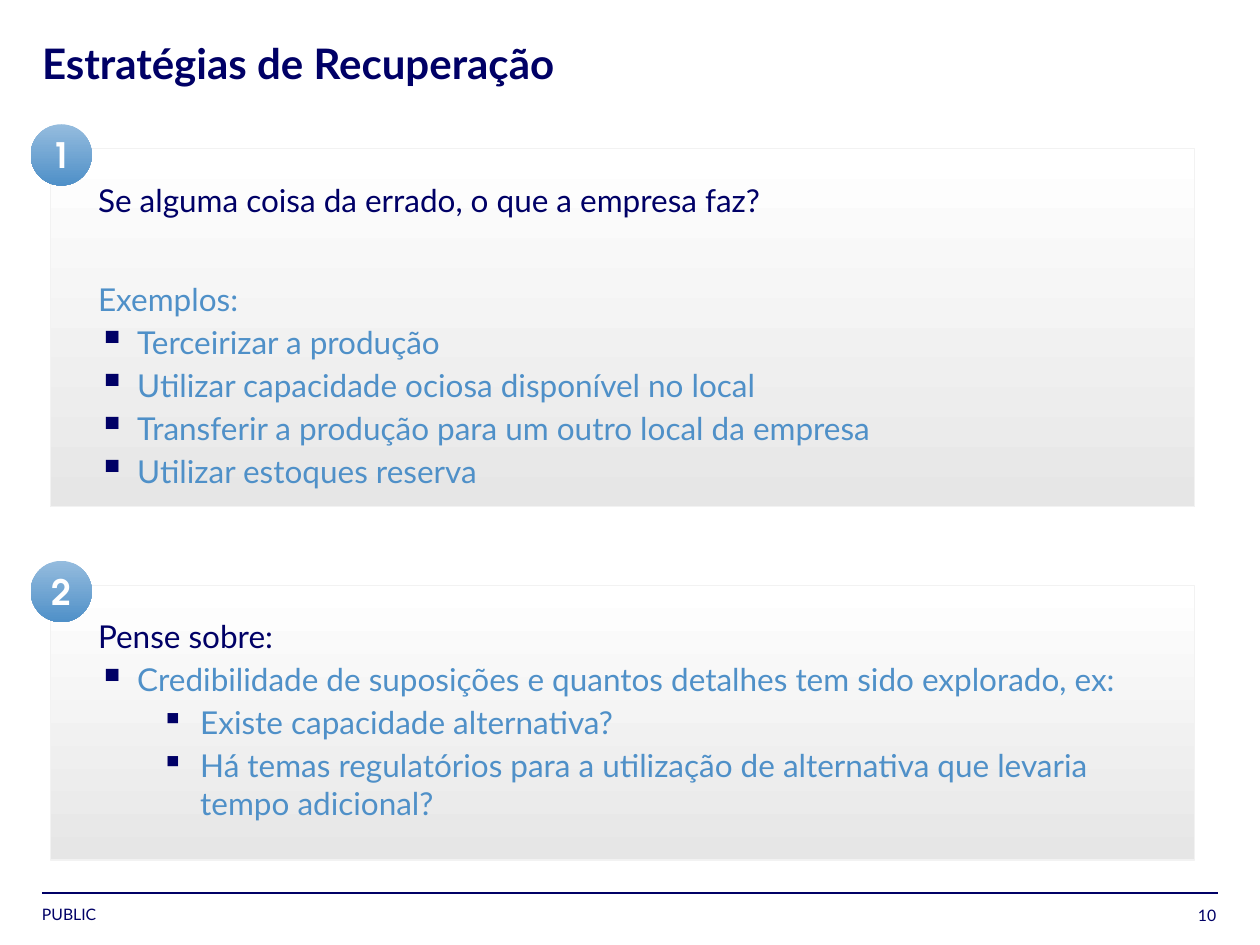
from lxml import etree
from pptx import Presentation
from pptx.dml.color import RGBColor
from pptx.enum import shapes, text
from pptx.oxml import ns
from pptx.util import Pt

NAVY, BLUE, WHITE = "000066", "4F90C8", "FFFFFF"
LEFT, TEXT_LEFT, TEXT_WIDTH = 24, 56, 599


def color(value):
    return RGBColor.from_string(value)


class SlideWriter:
    font = "Lato"
    badge_font = "TeX Gyre Adventor"
    indent = 22.4

    def __init__(self, page):
        self.page = page

    def style(self, para, size, hue, bold=False, name=None):
        para.font.name = name or self.font
        para.font.size = Pt(size)
        para.font.bold = bold
        para.font.color.rgb = color(hue)

    def frame(self, shape, wrap=True, anchor=text.MSO_ANCHOR.TOP):
        frame = shape.text_frame
        frame.margin_left = frame.margin_right = 0
        frame.margin_top = frame.margin_bottom = 0
        frame.auto_size = text.MSO_AUTO_SIZE.NONE
        frame.word_wrap = wrap
        frame.vertical_anchor = anchor
        return frame

    def title(self, words, left, top, width, height):
        shape = self.page.shapes.title
        shape.left, shape.top = Pt(left), Pt(top)
        shape.width, shape.height = Pt(width), Pt(height)
        para = self.frame(shape).paragraphs[0]
        para.text = words
        para.alignment = text.PP_ALIGN.LEFT
        para.line_spacing = 0.9
        self.style(para, 24, NAVY, bold=True)

    def rule(self, left, right, y):
        line = self.page.shapes.add_connector(
            shapes.MSO_CONNECTOR.STRAIGHT, Pt(left), Pt(y), Pt(right), Pt(y))
        line.line.color.rgb = color(NAVY)
        line.line.width = Pt(1)
        etree.SubElement(line._element.spPr, ns.qn("a:effectLst"))

    def label(self, words, left, top, width, height, align, anchor, wrap=True):
        box = self.page.shapes.add_textbox(Pt(left), Pt(top), Pt(width), Pt(height))
        para = self.frame(box, wrap, anchor).paragraphs[0]
        para.text = words
        para.alignment = align
        self.style(para, 9, NAVY)

    def gradient(self, kind, left, top, width, height, start, end):
        shape = self.page.shapes.add_shape(
            kind, Pt(left), Pt(top), Pt(width), Pt(height))
        shape.shadow.inherit = False
        shape.fill.gradient()
        shape.fill.gradient_angle = 270
        for stop, hue, position in zip(shape.fill.gradient_stops, (start, end), (0, 1)):
            stop.color.rgb = color(hue)
            stop.position = position
        return shape

    def panel(self, top, height):
        shape = self.gradient(shapes.MSO_SHAPE.RECTANGLE, 28.8, top, 653.8, height,
                              WHITE, "E6E6E6")
        shape.line.color.rgb = color("F2F2F2")
        shape.line.width = Pt(0.75)

    def badge(self, number, top):
        shape = self.gradient(shapes.MSO_SHAPE.OVAL, 17.5, top, 35, 35, "95BCDE", BLUE)
        shape.line.fill.background()
        shape.text_frame.vertical_anchor = text.MSO_ANCHOR.MIDDLE
        para = shape.text_frame.paragraphs[0]
        para.text = str(number)
        para.alignment = text.PP_ALIGN.CENTER
        self.style(para, 20, WHITE, bold=True, name=self.badge_font)

    def bullet(self, para, level):
        para.level = level
        props = para._p.get_or_add_pPr()
        props.set("marL", str(Pt(self.indent + 36 * level)))
        props.set("indent", str(-Pt(self.indent)))
        hue = etree.SubElement(props, ns.qn("a:buClr"))
        etree.SubElement(hue, ns.qn("a:srgbClr"), val=NAVY)
        size = "100000" if level else "120000"
        etree.SubElement(props, ns.qn("a:buSzPct"), val=size)
        etree.SubElement(props, ns.qn("a:buChar"), char="▪")

    def body(self, items, top, height, hue):
        box = self.page.shapes.add_textbox(
            Pt(TEXT_LEFT), Pt(top), Pt(TEXT_WIDTH), Pt(height))
        frame = self.frame(box)
        for index, (level, words) in enumerate(items):
            para = frame.add_paragraph() if index else frame.paragraphs[0]
            para.text = words
            para.space_after = Pt(3)
            if level is not None:
                self.bullet(para, level)
            self.style(para, 18, hue)


def main():
    deck = Presentation()
    deck.slide_width, deck.slide_height = Pt(720), Pt(540)
    writer = SlideWriter(deck.slides.add_slide(deck.slide_layouts[5]))

    writer.rule(LEFT, 696, 510.3)
    writer.label("PUBLIC", LEFT, 517, 92, 11, text.PP_ALIGN.LEFT,
                 text.MSO_ANCHOR.TOP, wrap=False)
    writer.label("10", 657.5, 517, 37.5, 11.5, text.PP_ALIGN.RIGHT,
                 text.MSO_ANCHOR.BOTTOM)
    writer.title("Estratégias de Recuperação", LEFT, 24.5, 603, 28)

    sections = [
        (85, 204.5, "Se alguma coisa da errado, o que a empresa faz?", 103.7, 159.8, 143, [
            (None, "Exemplos:"),
            (0, "Terceirizar a produção"),
            (0, "Utilizar capacidade ociosa disponível no local"),
            (0, "Transferir a produção para um outro local da empresa"),
            (0, "Utilizar estoques reserva"),
        ]),
        (334.5, 157, "Pense sobre:", 352.8, 377.3, 98, [
            (0, "Credibilidade de suposições e quantos detalhes tem sido explorado, ex:"),
            (1, "Existe capacidade alternativa?"),
            (1, "Há temas regulatórios para a utilização de alternativa "
                "que levaria tempo adicional?"),
        ]),
    ]
    for number, section in enumerate(sections, 1):
        top, height, heading, heading_top, list_top, list_height, items = section
        writer.panel(top, height)
        writer.body([(None, heading)], heading_top, 27, NAVY)
        writer.body(items, list_top, list_height, BLUE)
        writer.badge(number, top - 14)

    deck.save("out.pptx")


if __name__ == "__main__":
    main()
